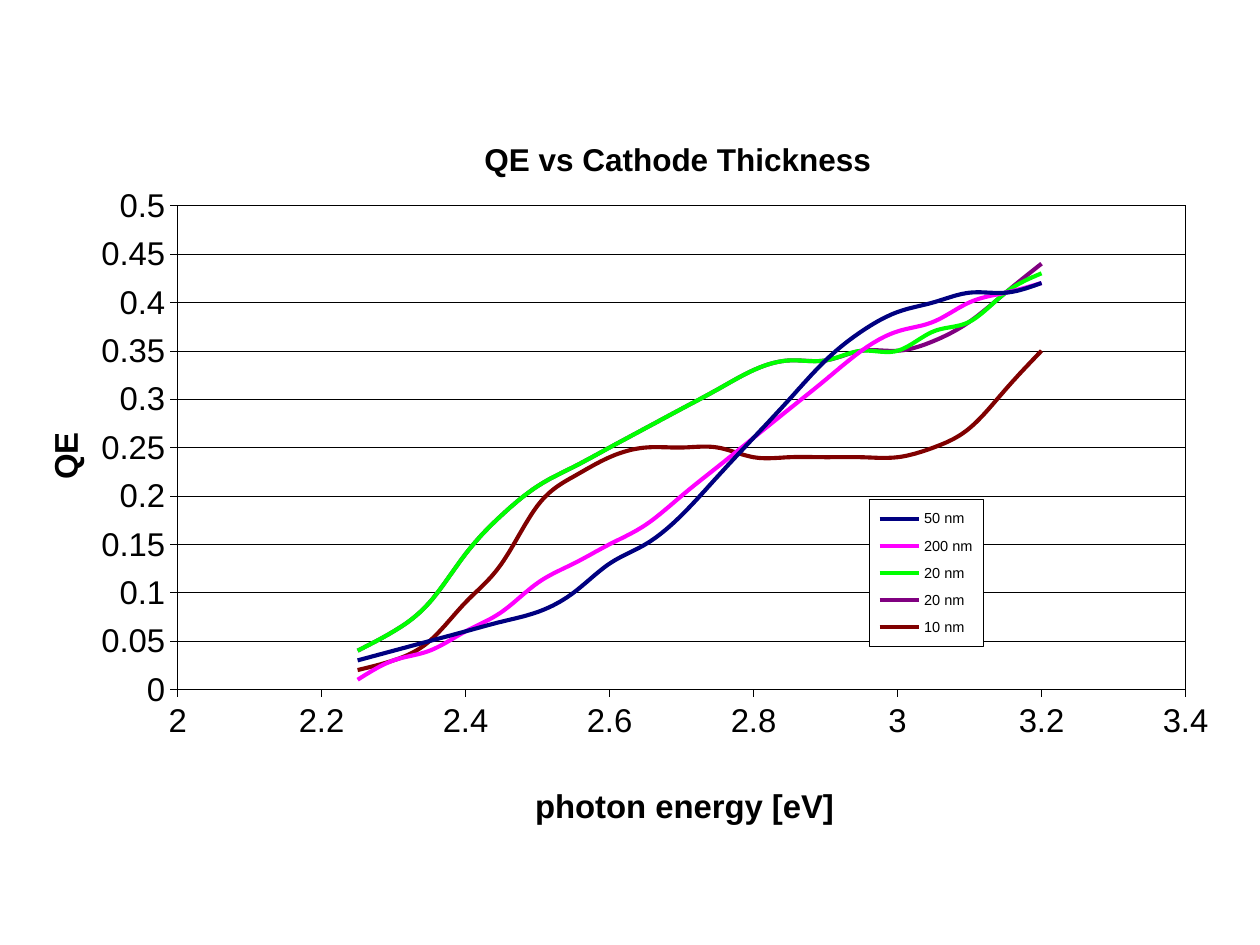
from pptx import Presentation
from pptx.chart.data import XyChartData
from pptx.dml.color import RGBColor
from pptx.enum.chart import XL_CHART_TYPE, XL_LEGEND_POSITION, XL_TICK_MARK
from pptx.oxml import parse_xml
from pptx.oxml.ns import nsdecls, qn
from pptx.util import Cm, Pt

SMOOTH = XL_CHART_TYPE.XY_SCATTER_SMOOTH_NO_MARKERS
RIGHT = XL_LEGEND_POSITION.RIGHT
OUT = XL_TICK_MARK.OUTSIDE
NONE = XL_TICK_MARK.NONE
BLACK = "000000"


def style(font, size, bold=False):
    font.name = "Arial"
    font.size = Pt(size)
    font.bold = bold
    font.color.rgb = RGBColor.from_string(BLACK)


def place(node, index, x, y, size=None, inner=False):
    old = node.find(qn("c:layout"))
    if old is not None:
        node.remove(old)
    tags = [("layoutTarget", "inner")] if inner else []
    tags += [("xMode", "edge"), ("yMode", "edge"), ("x", x), ("y", y)]
    if size:
        tags += [("w", size[0]), ("h", size[1])]
    body = "".join(f'<c:{tag} val="{val}"/>' for tag, val in tags)
    node.insert(index, parse_xml(
        f'<c:layout {nsdecls("c")}><c:manualLayout>{body}</c:manualLayout></c:layout>'))


lines = [
    ("50 nm", "000080", [0.03, 0.04, 0.05, 0.06, 0.07, 0.08, 0.1, 0.13, 0.15, 0.18,
                         0.22, 0.26, 0.3, 0.34, 0.37, 0.39, 0.4, 0.41, 0.41, 0.42]),
    ("200 nm", "FF00FF", [0.01, 0.03, 0.04, 0.06, 0.08, 0.11, 0.13, 0.15, 0.17, 0.2,
                          0.23, 0.26, 0.29, 0.32, 0.35, 0.37, 0.38, 0.4, 0.41, 0.42]),
    ("20 nm", "00FF00", [0.04, 0.06, 0.09, 0.14, 0.18, 0.21, 0.23, 0.25, 0.27, 0.29,
                         0.31, 0.33, 0.34, 0.34, 0.35, 0.35, 0.37, 0.38, 0.41, 0.43]),
    ("20 nm", "800080", [0.04, 0.06, 0.09, 0.14, 0.18, 0.21, 0.23, 0.25, 0.27, 0.29,
                         0.31, 0.33, 0.34, 0.34, 0.35, 0.35, 0.36, 0.38, 0.41, 0.44]),
    ("10 nm", "800000", [0.02, 0.03, 0.05, 0.09, 0.13, 0.19, 0.22, 0.24, 0.25, 0.25,
                         0.25, 0.24, 0.24, 0.24, 0.24, 0.24, 0.25, 0.27, 0.31, 0.35]),
]

deck = Presentation()
deck.slide_width = Cm(25.4)
deck.slide_height = Cm(19.05)
slide = deck.slides.add_slide(deck.slide_layouts[6])

data = XyChartData()
for name, color, values in lines:
    points = data.add_series(name)
    for step, value in enumerate(values):
        points.add_data_point(round(2.25 + 0.05 * step, 2), value)

frame = slide.shapes.add_chart(SMOOTH, Cm(0), Cm(2.24), Cm(25.4), Cm(14.78), data)
chart = frame.chart
style(chart.font, 9)

for curve, (name, color, values) in zip(chart.plots[0].series, lines):
    curve.format.line.width = Pt(2.35)
    curve.format.line.color.rgb = RGBColor.from_string(color)
    curve._element.find(qn("c:smooth")).set("val", "1")

x_axis, y_axis = chart.category_axis, chart.value_axis
x_axis.has_major_gridlines = False
y_axis.has_major_gridlines = True

for axis, low, high, unit in [(x_axis, 2, 3.4, 0.2), (y_axis, 0, 0.5, 0.05)]:
    axis.minimum_scale = low
    axis.maximum_scale = high
    axis.major_unit = unit
    axis.major_tick_mark = OUT
    axis.minor_tick_mark = NONE
    axis.tick_labels.number_format = "General"
    axis.tick_labels.number_format_is_linked = False
    style(axis.tick_labels.font, 18.8)

for rule in (x_axis.format.line, y_axis.format.line, y_axis.major_gridlines.format.line):
    rule.width = Pt(0.2)
    rule.color.rgb = RGBColor.from_string(BLACK)

for owner, text, size, x, y in [
    (chart, "QE vs Cathode Thickness", 18, 0.38, 0.03),
    (x_axis, "photon energy [eV]", 18.8, 0.42, 0.91),
    (y_axis, "QE", 18.8, 0.03, 0.43),
]:
    title = owner.chart_title if owner is chart else owner.axis_title
    title.text_frame.text = text
    style(title.text_frame.paragraphs[0].runs[0].font, size, True)
    place(title._element, 1, x, y)

chart.has_legend = True
legend = chart.legend
legend.position = RIGHT
legend.include_in_layout = True
style(legend.font, 8.3)
place(legend._element, 1, 0.69, 0.53, (0.09, 0.2))

plot = chart._chartSpace.find(f'{qn("c:chart")}/{qn("c:plotArea")}')
place(plot, 0, 0.141, 0.129, (0.8, 0.66), True)

for last, fill in [
    (plot[-1], "<a:noFill/>"),
    (legend._element.find(qn("c:overlay")),
     '<a:solidFill><a:srgbClr val="FFFFFF"/></a:solidFill>'),
]:
    last.addnext(parse_xml(
        f'<c:spPr {nsdecls("c", "a")}>{fill}<a:ln w="2540"><a:solidFill>'
        f'<a:srgbClr val="{BLACK}"/></a:solidFill></a:ln></c:spPr>'))

deck.save("out.pptx")
